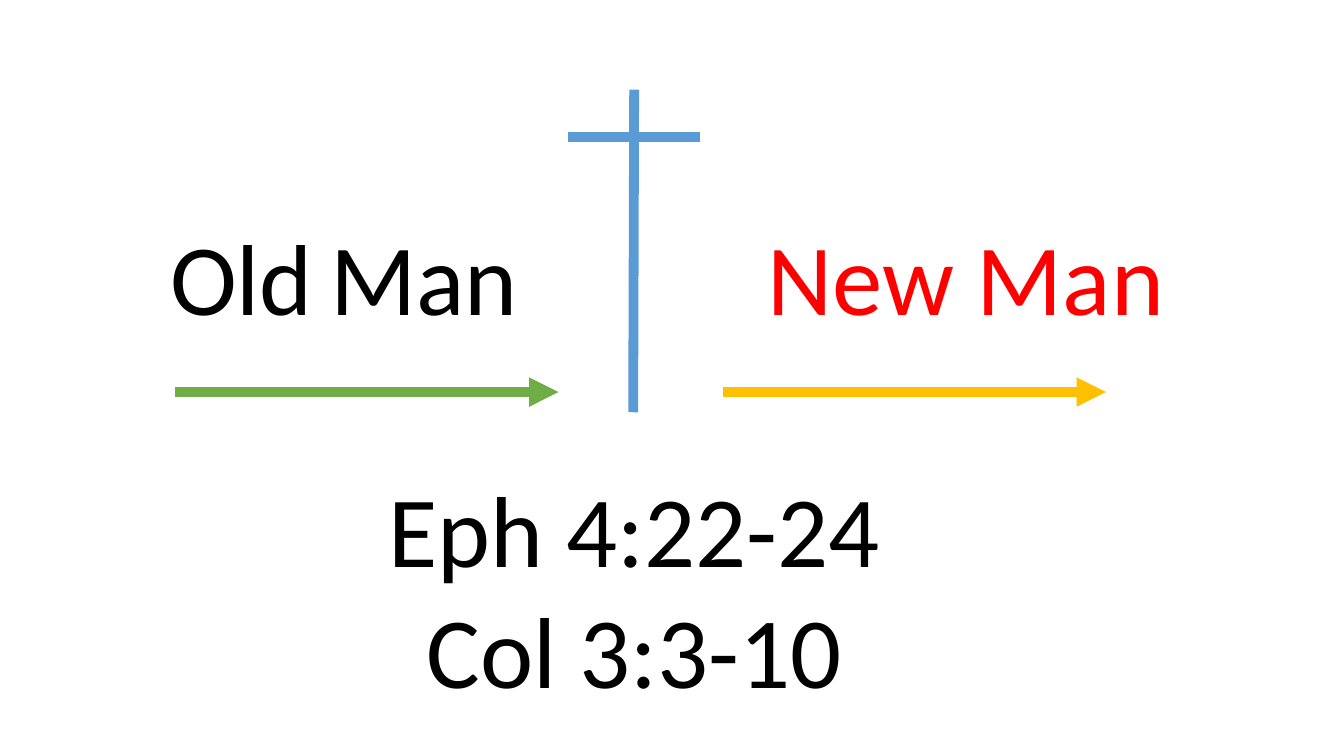
from dataclasses import dataclass

from lxml import etree
from pptx import Presentation
from pptx.dml.color import RGBColor
from pptx.enum.shapes import MSO_CONNECTOR
from pptx.enum.text import MSO_AUTO_SIZE, PP_ALIGN
from pptx.oxml.ns import qn
from pptx.slide import Slide
from pptx.util import Inches, Pt

STRAIGHT = MSO_CONNECTOR.STRAIGHT
CENTER = PP_ALIGN.CENTER
GROW = MSO_AUTO_SIZE.SHAPE_TO_FIT_TEXT

BLACK = RGBColor(0x00, 0x00, 0x00)
RED = RGBColor(0xFF, 0x00, 0x00)
BLUE = RGBColor(0x5B, 0x9B, 0xD5)
GREEN = RGBColor(0x70, 0xAD, 0x47)
GOLD = RGBColor(0xFF, 0xC0, 0x00)

FONT = "Calibri"
TEXT_SIZE = 72
WORD_GAP_SIZE = 54
LINE_WIDTH = 7
ARROW_TOP = 3.89
ARROW_LENGTH = 3.8


@dataclass(frozen=True)
class Line:
    start: tuple[float, float]
    end: tuple[float, float]
    color: RGBColor
    arrow: bool = False


@dataclass(frozen=True)
class Label:
    """Each line of text is a tuple of its runs."""
    lines: tuple[tuple[str, ...], ...]
    left: float
    top: float
    width: float
    height: float
    color: RGBColor = BLACK
    wrap: bool = True


def arrow(left: float, color: RGBColor) -> Line:
    return Line((left, ARROW_TOP), (left + ARROW_LENGTH, ARROW_TOP), color, True)


CROSS = (
    Line((5.63, 1.36), (6.94, 1.36), BLUE),
    Line((6.29, 0.89), (6.28, 4.09), BLUE),
)
ARROWS = (arrow(1.74, GREEN), arrow(7.17, GOLD))
LABELS = (
    Label((("New Man",),), 7.46, 2.08, 4.24, 1.31, RED),
    Label((("Old", " ", "Man"),), 1.44, 2.08, 3.94, 1.31),
    Label((("Eph 4:22-24",), ("Col 3:3-10",)), 3.73, 4.58, 5.12, 2.52, wrap=False),
)


def draw_line(slide: Slide, line: Line) -> None:
    points = [Inches(value) for value in (*line.start, *line.end)]
    connector = slide.shapes.add_connector(STRAIGHT, *points)
    connector.line.color.rgb = line.color
    connector.line.width = Pt(LINE_WIDTH)
    if line.arrow:
        outline = connector.line._get_or_add_ln()
        etree.SubElement(outline, qn("a:tailEnd"), type="triangle")
    etree.SubElement(connector._element.spPr, qn("a:effectLst"))


def draw_label(slide: Slide, label: Label) -> None:
    shape = slide.shapes.add_textbox(
        Inches(label.left), Inches(label.top), Inches(label.width), Inches(label.height)
    )
    text_frame = shape.text_frame
    text_frame.word_wrap = label.wrap
    text_frame.auto_size = GROW
    for index, texts in enumerate(label.lines):
        paragraph = text_frame.add_paragraph() if index else text_frame.paragraphs[0]
        paragraph.alignment = CENTER
        for text in texts:
            run = paragraph.add_run()
            run.text = text
            run.font.name = FONT
            run.font.size = Pt(WORD_GAP_SIZE if text == " " else TEXT_SIZE)
            run.font.color.rgb = label.color


def main() -> None:
    presentation = Presentation()
    presentation.slide_width = Inches(13.33)
    presentation.slide_height = Inches(7.5)
    slide = presentation.slides.add_slide(presentation.slide_layouts[6])

    # Cross and arrows
    for line in CROSS + ARROWS:
        draw_line(slide, line)

    # Captions and verses
    for label in LABELS:
        draw_label(slide, label)

    presentation.save("out.pptx")


if __name__ == "__main__":
    main()
